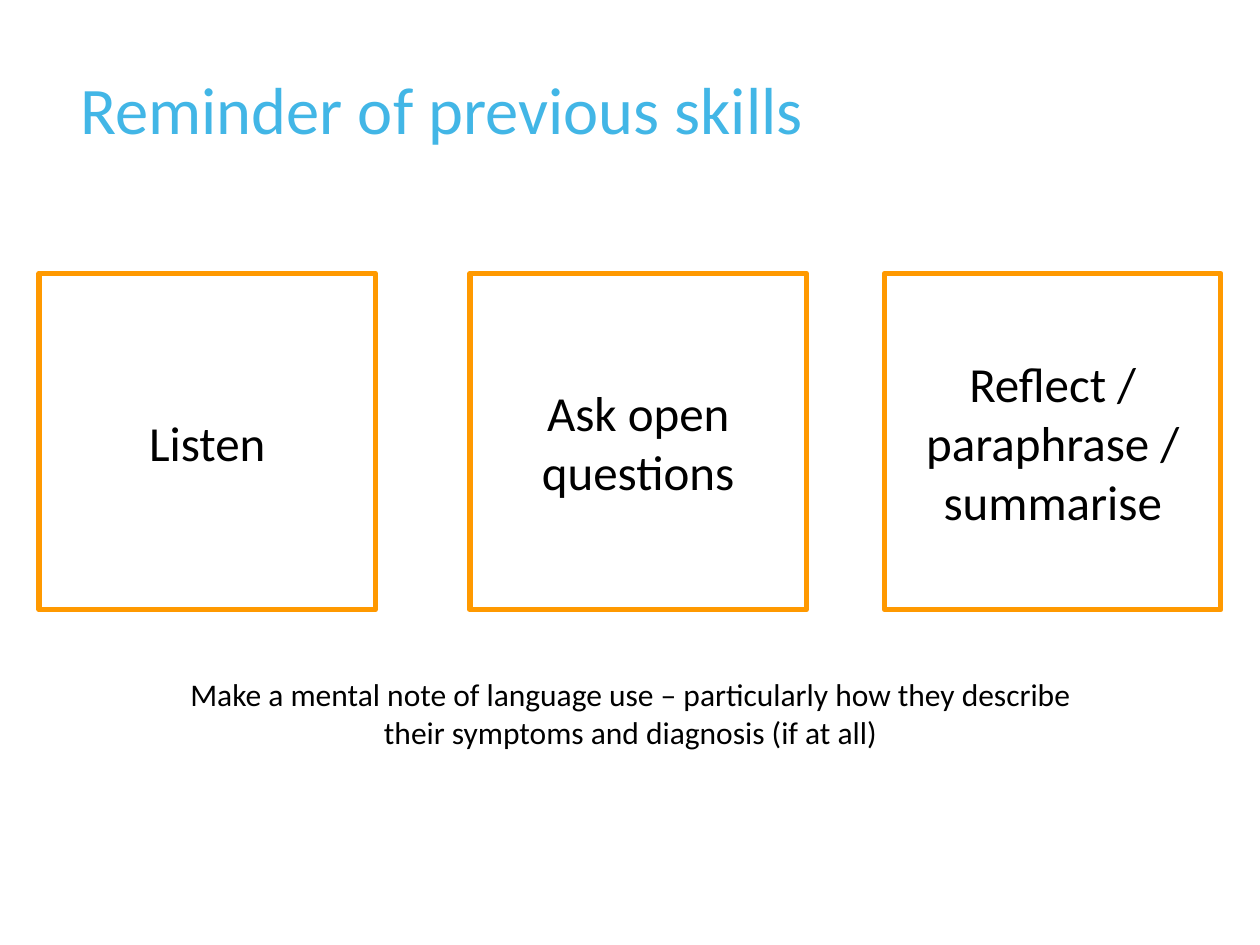
from pptx import Presentation
from pptx.dml.color import RGBColor
from pptx.enum.shapes import MSO_SHAPE
from pptx.enum.text import MSO_ANCHOR, PP_ALIGN
from pptx.util import Inches, Pt

COLORS = {"title": "42B6E6", "border": "FF9900", "fill": "FFFFFF", "text": "000000"}


def color(name):
    return RGBColor.from_string(COLORS[name])


def write(box, text, size, color_name, anchor, **paragraph_format):
    """Fill a box with one wrapped paragraph in Calibri."""
    frame = box.text_frame
    frame.word_wrap = True
    frame.vertical_anchor = anchor
    para = frame.paragraphs[0]
    for name, value in paragraph_format.items():
        setattr(para, name, value)
    span = para.add_run()
    span.text = text
    for name, value in {"name": "Calibri", "size": Pt(size)}.items():
        setattr(span.font, name, value)
    span.font.color.rgb = color(color_name)


deck = Presentation()
deck.slide_width, deck.slide_height = Inches(10), Inches(7.5)
page = deck.slides.add_slide(deck.slide_layouts[6])

title = page.shapes.add_textbox(Inches(0.54), Inches(0.56), Inches(9.06), Inches(1.03))
write(title, "Reminder of previous skills", 38, "title", MSO_ANCHOR.TOP, line_spacing=0.9)

skills = [
    (0.31, "Listen"),
    (3.73, "Ask open questions"),
    (7.02, "Reflect / paraphrase / summarise"),
]
side = Inches(2.67)
for left, skill in skills:
    box = page.shapes.add_shape(MSO_SHAPE.RECTANGLE, Inches(left), Inches(2.17), side, side)
    box.shadow.inherit = False
    box.fill.solid()
    box.fill.fore_color.rgb = color("fill")
    box.line.color.rgb = color("border")
    box.line.width = Pt(3)
    write(box, skill, 28, "text", MSO_ANCHOR.MIDDLE, alignment=PP_ALIGN.CENTER)

advice = page.shapes.add_textbox(Inches(1.41), Inches(5.31), Inches(7.19), Inches(0.71))
write(
    advice,
    "Make a mental note of language use – particularly how they describe "
    "their symptoms and diagnosis (if at all)",
    18, "text", MSO_ANCHOR.TOP, alignment=PP_ALIGN.CENTER,
)

deck.save("out.pptx")
